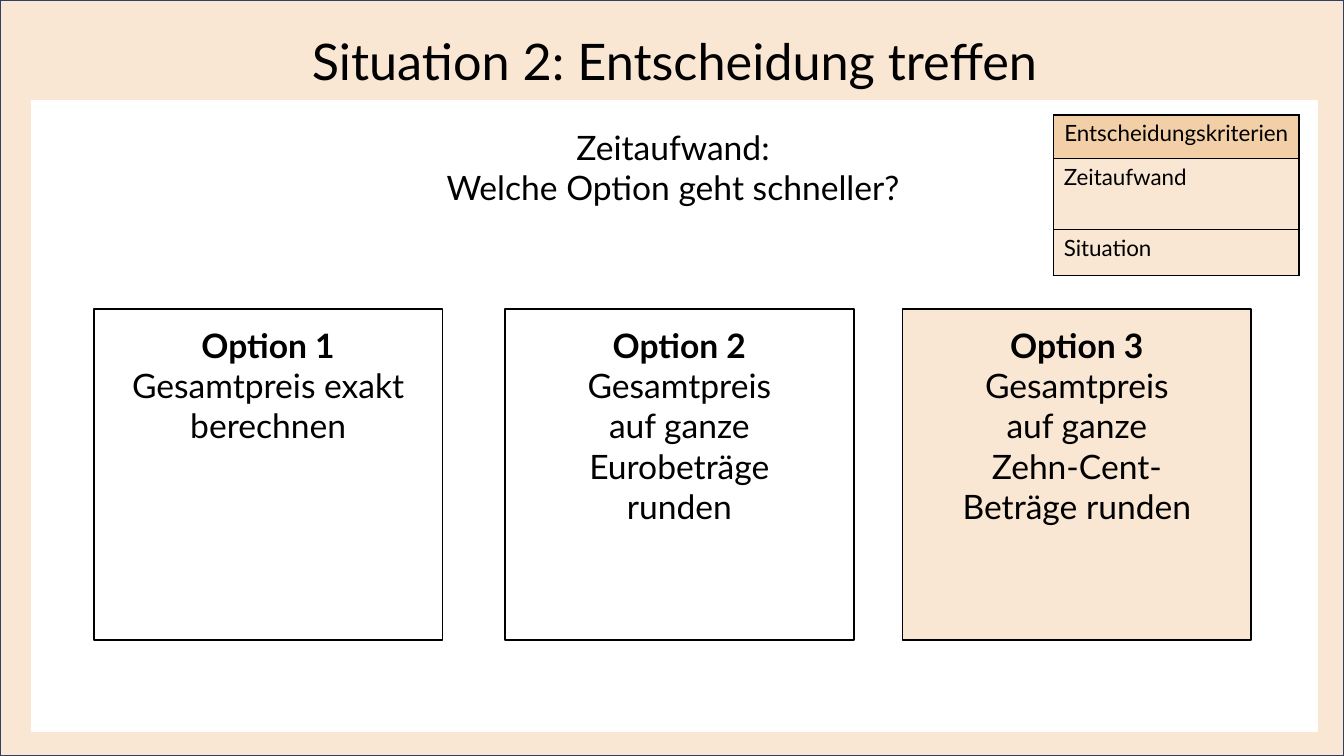
from dataclasses import dataclass

from lxml.etree import SubElement
from pptx import Presentation
from pptx.dml.color import RGBColor
from pptx.enum.shapes import MSO_SHAPE as Shape
from pptx.enum.text import MSO_ANCHOR as Anchor, PP_ALIGN as Align
from pptx.oxml.ns import qn
from pptx.util import Inches, Pt


@dataclass(frozen=True)
class Theme:
    font: str = "Lato"
    ink: str = "000000"
    paper: str = "FFFFFF"
    sand: str = "F9E7D3"
    header: str = "F2CFA7"
    frame: str = "303F65"
    title: int = 36
    body: int = 24
    criteria: int = 16
    outline: float = 1.25
    cell_border: int = 1


class Board:
    """Draws themed elements on one slide, measured in 40 columns and 30 rows."""

    columns, rows = 40, 30

    def __init__(self, deck, theme):
        self.theme = theme
        self.column = deck.slide_width / self.columns
        self.row = deck.slide_height / self.rows
        self.page = deck.slides.add_slide(deck.slide_layouts[6])

    def place(self, left, top, width, height):
        return (round(left * self.column), round(top * self.row),
                round(width * self.column), round(height * self.row))

    def panel(self, area, line, fill=None):
        box = self.page.shapes.add_shape(Shape.RECTANGLE, *self.place(*area))
        box.shadow.inherit = False
        if fill:
            self.paint(box.fill, fill)
        else:
            box.fill.background()
        box.line.color.rgb = RGBColor.from_string(line)
        box.line.width = Pt(self.theme.outline)

    def text(self, area, lines, size, bold_first=False):
        box = self.page.shapes.add_textbox(*self.place(*area))
        frame = box.text_frame
        for name, value in {"word_wrap": True, "vertical_anchor": Anchor.TOP}.items():
            setattr(frame, name, value)
        for number, line in enumerate(lines):
            para = frame.add_paragraph() if number else frame.paragraphs[0]
            self.fill_para(para, line, size, Align.CENTER, bold_first and number == 0)

    def fill_para(self, para, line, size, align, bold=False):
        para.alignment = align
        span = para.add_run()
        span.text = line
        formats = {"name": self.theme.font, "size": Pt(size), "bold": bold}
        for name, value in formats.items():
            setattr(span.font, name, value)
        span.font.color.rgb = RGBColor.from_string(self.theme.ink)

    def table(self, left, top, width, entries):
        area = self.place(left, top, width, sum(height for _, height in entries))
        table = self.page.shapes.add_table(len(entries), 1, *area).table
        for name in ("first_row", "horz_banding"):
            setattr(table, name, False)
        for number, (label, height) in enumerate(entries):
            table.rows[number].height = round(height * self.row)
            cell = table.cell(number, 0)
            heading = number == 0
            self.border(cell)
            self.paint(cell.fill, self.theme.header if heading else self.theme.sand)
            self.fill_para(cell.text_frame.paragraphs[0], label, self.theme.criteria,
                           Align.CENTER if heading else Align.LEFT)

    def border(self, cell):
        properties = cell._tc.get_or_add_tcPr()
        for side in ("a:lnL", "a:lnR", "a:lnT", "a:lnB"):
            edge = SubElement(properties, qn(side), w=str(Pt(self.theme.cell_border)))
            solid = SubElement(edge, qn("a:solidFill"))
            SubElement(solid, qn("a:srgbClr"), val=self.theme.ink)

    def paint(self, fill, color):
        fill.solid()
        fill.fore_color.rgb = RGBColor.from_string(color)


def main():
    deck = Presentation()
    deck.slide_width, deck.slide_height = Inches(13.33), Inches(7.5)
    theme = Theme()
    board = Board(deck, theme)

    board.panel((0, 0, board.columns, board.rows), theme.frame, theme.sand)
    board.panel((0.96, 4, 38.23, 25), theme.paper, theme.paper)
    board.text((0.96, 1, 38.23, 2.84), ["Situation 2: Entscheidung treffen"], theme.title)
    board.text((3.21, 4.84, 33.64, 10.08),
               ["Zeitaufwand:", "Welche Option geht schneller?"], theme.body)

    card_top, card_width, card_height = 12.25, 10.38, 13.16
    options = [
        (2.79, 8.94, 5.24, None, "Gesamtpreis exakt berechnen"),
        (15.03, 7.62, 8.48, None, "Gesamtpreis auf ganze Eurobeträge runden"),
        (26.86, 7.62, 8.48, theme.sand, "Gesamtpreis auf ganze Zehn-Cent-Beträge runden"),
    ]
    for number, (left, text_width, text_height, fill, task) in enumerate(options, 1):
        board.panel((left, card_top, card_width, card_height), theme.ink, fill)
        text_left = left + (card_width - text_width) / 2
        board.text((text_left, card_top + 0.43, text_width, text_height),
                   [f"Option {number}", task], theme.body, bold_first=True)

    board.table(31.36, 4.56, 7.3, [
        ("Entscheidungskriterien", 1.72), ("Zeitaufwand", 2.84), ("Situation", 1.8)])
    deck.save("out.pptx")


if __name__ == "__main__":
    main()
